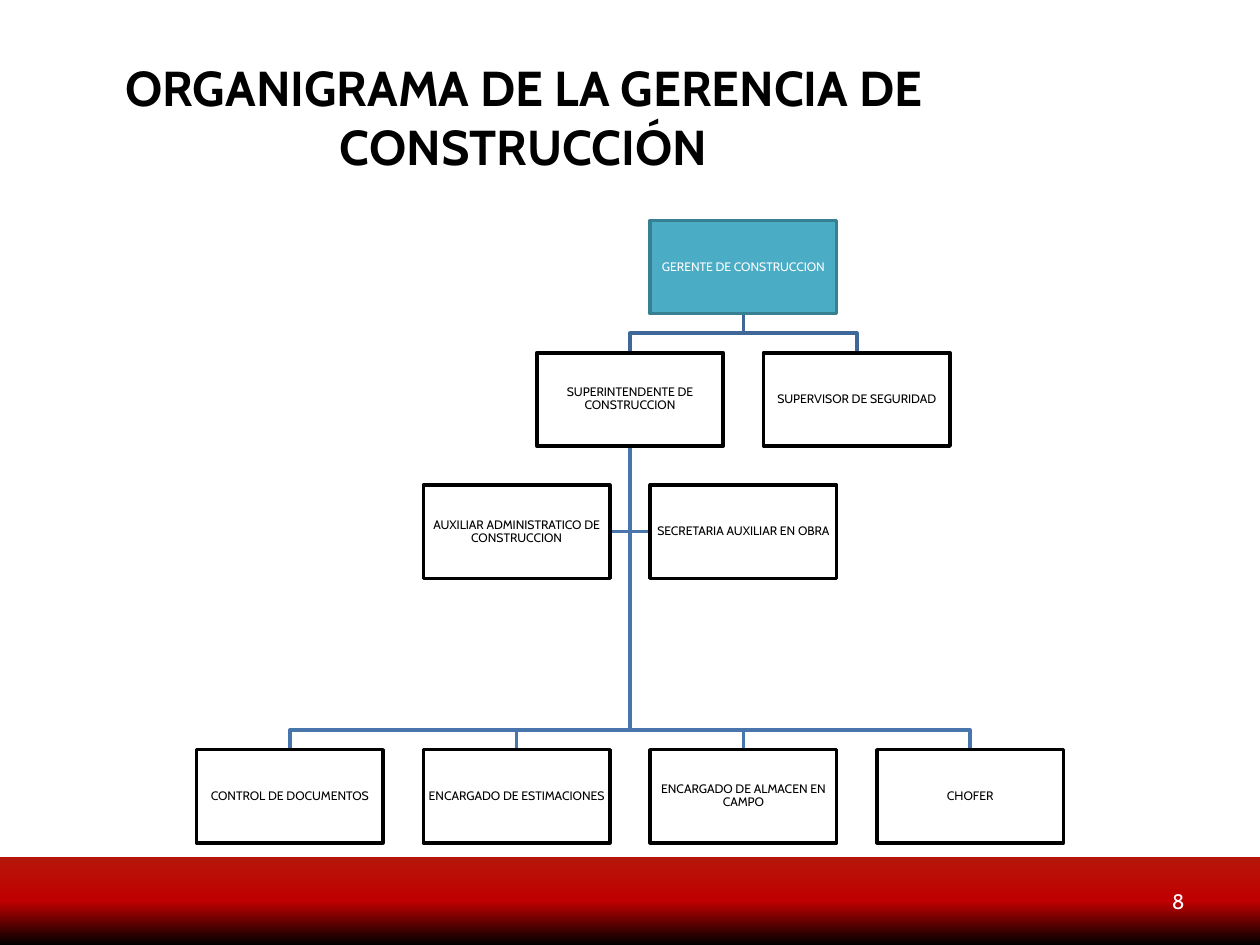
import copy

import pptx
import pptx.dml.color
import pptx.enum.shapes
import pptx.enum.text
import pptx.oxml.ns
import pptx.util

RGB = pptx.dml.color.RGBColor
Align = pptx.enum.text.PP_ALIGN
RECT = pptx.enum.shapes.MSO_SHAPE.RECTANGLE

BLACK = RGB(0, 0, 0)
WHITE = RGB(255, 255, 255)
TEAL = RGB(0x4B, 0xAC, 0xC6)
RIM = RGB(0x37, 0x7F, 0x92)
NAVY = RGB(0x3F, 0x67, 0x97)
BLUE = RGB(0x48, 0x75, 0xAC)
BAND = ((0, RGB(0xB6, 0x16, 0x09)), (0.5, RGB(0xC0, 0, 0)), (1, BLACK))

WIDE, HIGH = 10, 7.5
BOX_W, BOX_H = 1.48, 0.74
MID, TOP = WIDE / 2, 1.75
COL, ROW = 0.9, 1.05
GAP = ROW - BOX_H

HEAD = ("GERENTE DE CONSTRUCCION", 1, 0)
CHIEF = ("SUPERINTENDENTE DE CONSTRUCCION", 0, 1)
SAFETY = ("SUPERVISOR DE SEGURIDAD", 2, 1)
AIDES = (
    ("AUXILIAR ADMINISTRATICO DE CONSTRUCCION", -1, 2),
    ("SECRETARIA AUXILIAR EN OBRA", 1, 2),
)
STAFF = (
    ("CONTROL DE DOCUMENTOS", -3, 4),
    ("ENCARGADO DE ESTIMACIONES", -1, 4),
    ("ENCARGADO DE ALMACEN EN CAMPO", 1, 4),
    ("CHOFER", 3, 4),
)


def inch(*sizes):
    return [pptx.util.Inches(size) for size in sizes]


def place(post):
    return MID + post[1] * COL, TOP + post[2] * ROW


def write(shape, text, size, color, align=Align.CENTER, bold=False):
    frame = shape.text_frame
    frame.text = text
    frame.word_wrap = True
    frame.vertical_anchor = pptx.enum.text.MSO_ANCHOR.MIDDLE
    line = frame.paragraphs[0]
    line.alignment = align
    font = line.runs[0].font
    font.name, font.size, font.bold = "Cabin", pptx.util.Pt(size), bold
    font.color.rgb = color
    return frame


def label(slide, area, *style):
    write(slide.shapes.add_textbox(*inch(*area)), *style)


def band(slide):
    top = 6.8
    shape = slide.shapes.add_shape(RECT, *inch(0, top, WIDE, HIGH - top))
    shape.shadow.inherit = False
    shape.line.fill.background()
    shape.fill.gradient()
    shape.fill.gradient_angle = 270
    stops = shape._element.spPr.find(".//" + pptx.oxml.ns.qn("a:gsLst"))
    stops.append(copy.deepcopy(stops[0]))
    for stop, (share, color) in zip(shape.fill.gradient_stops, BAND):
        stop.position = share
        stop.color.rgb = color


def box(slide, post, fill=WHITE, edge=BLACK, ink=BLACK):
    x, y = place(post)
    shape = slide.shapes.add_shape(RECT, *inch(x - BOX_W / 2, y, BOX_W, BOX_H))
    shape.shadow.inherit = False
    shape.fill.solid()
    shape.fill.fore_color.rgb = fill
    shape.line.color.rgb = edge
    shape.line.width = pptx.util.Pt(2)
    frame = write(shape, post[0], 7, ink)
    frame.margin_left = frame.margin_right = 0
    frame.margin_top = frame.margin_bottom = 0
    frame.paragraphs[0].line_spacing = 0.9


def trace(slide, color, *points):
    spots = [tuple(inch(*point)) for point in points]
    path = slide.shapes.build_freeform(*spots[0])
    path.add_line_segments(spots[1:], close=False)
    shape = path.convert_to_shape()
    shape.shadow.inherit = False
    shape.fill.background()
    shape.line.color.rgb = color
    shape.line.width = pptx.util.Pt(2)


def drop(slide, boss, post, color):
    x, y = place(boss)
    to, end = place(post)
    bend = end - GAP / 2
    trace(slide, color, (x, y + BOX_H), (x, bend), (to, bend), (to, end))


def side(slide, boss, post):
    x, y = place(boss)
    to, end = place(post)
    rim = to - BOX_W / 2 if to > x else to + BOX_W / 2
    level = end + BOX_H / 2
    trace(slide, BLUE, (x, y + BOX_H), (x, level), (rim, level))


def main():
    deck = pptx.Presentation()
    deck.slide_width, deck.slide_height = inch(WIDE, HIGH)
    slide = deck.slides.add_slide(deck.slide_layouts[6])

    band(slide)
    label(slide, (0.5, 0.3, 7.31, 1.25),
          "ORGANIGRAMA DE LA GERENCIA DE CONSTRUCCIÓN", 28, BLACK,
          Align.CENTER, True)
    label(slide, (7.17, 6.95, 2.33, 0.4), "8", 12, WHITE, Align.RIGHT)

    for post in (SAFETY, CHIEF):
        drop(slide, HEAD, post, NAVY)
    for post in AIDES:
        side(slide, CHIEF, post)
    for post in STAFF:
        drop(slide, CHIEF, post, BLUE)

    box(slide, HEAD, TEAL, RIM, WHITE)
    for post in (CHIEF, *STAFF, *AIDES, SAFETY):
        box(slide, post)

    deck.save("out.pptx")


if __name__ == "__main__":
    main()
